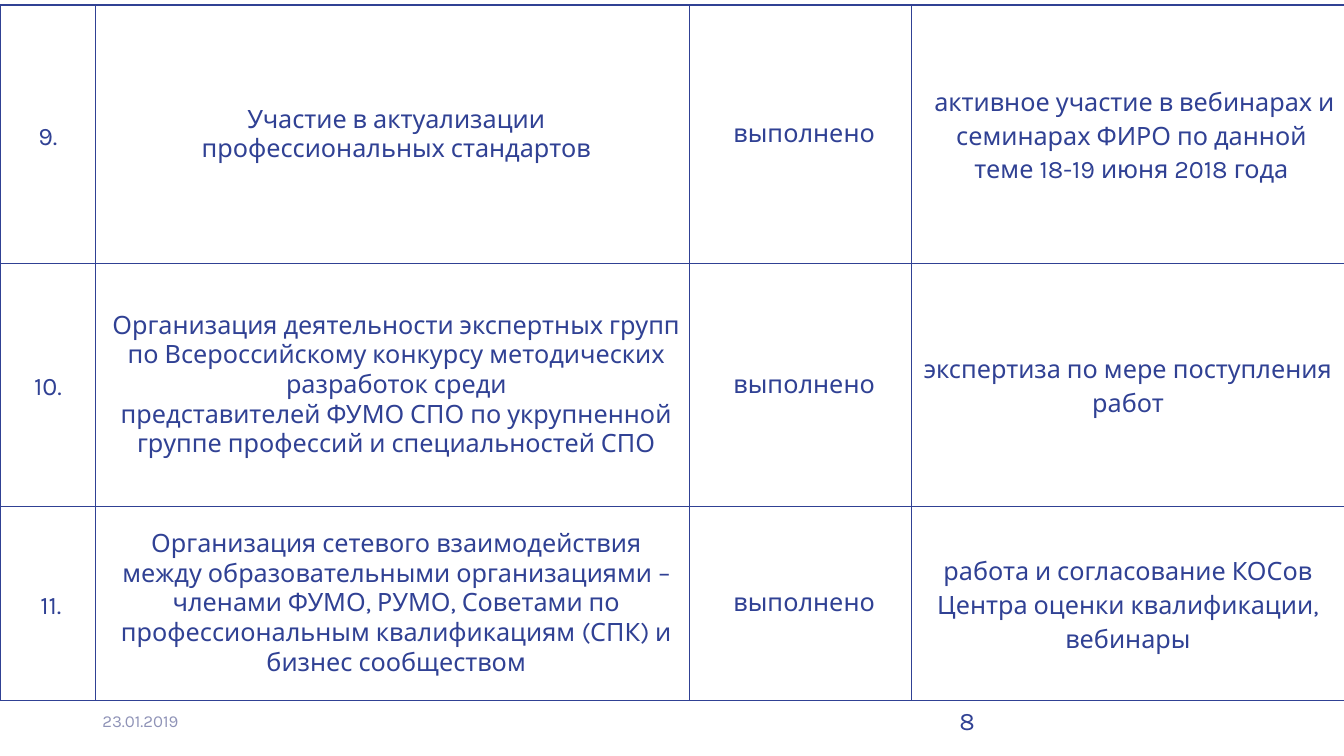
"""Builds a slide with a table of completed activities, a date and a page number."""
from lxml.etree import SubElement
from pptx import Presentation
from pptx.dml.color import RGBColor
from pptx.enum.text import MSO_ANCHOR, PP_ALIGN
from pptx.oxml.ns import qn
from pptx.util import Inches, Pt

COLORS = {"ink": "304194", "muted": "8F93B7"}
DONE = "выполнено"
ACTIVITIES = [
    ("9.",
     "Участие в актуализации\nпрофессиональных стандартов",
     DONE,
     " активное участие в вебинарах и семинарах ФИРО по данной теме 18-19 июня 2018 года"),
    ("10.",
     "Организация деятельности экспертных групп по Всероссийскому конкурсу "
     "методических разработок среди\n"
     "представителей ФУМО СПО по укрупненной группе профессий и специальностей СПО",
     DONE,
     "экспертиза по мере поступления работ"),
    ("\u00a011.".replace("\u00a0", " "),
     "Организация сетевого взаимодействия между образовательными организациями – "
     "членами ФУМО, РУМО, Советами по профессиональным квалификациям (СПК) "
     "и бизнес сообществом",
     DONE,
     "работа и согласование КОСов Центра оценки квалификации, вебинары"),
]
INDENTED = {(0, 1), (0, 2), (0, 3), (1, 1), (1, 2), (2, 1), (2, 2)}
LOOSE_COLUMNS = (0, 3)


class SlideBuilder:
    """Places styled elements on a grid of 160 columns and 90 rows."""

    font = "Karla"
    unit = Inches(1 / 12)
    margin = Inches(0.07)

    def __init__(self, prs):
        self.s = prs.slides.add_slide(prs.slide_layouts[6])

    def grid(self, *cells):
        return [round(c * self.unit) for c in cells]

    def style(self, p, size, color):
        p.font.name = self.font
        p.font.size = Pt(size)
        p.font.color.rgb = RGBColor.from_string(COLORS[color])

    def text(self, box, text, size, color, anchor):
        tf = self.s.shapes.add_textbox(*self.grid(*box)).text_frame
        tf.word_wrap = True
        tf.vertical_anchor = anchor
        tf.text = text
        self.style(tf.paragraphs[0], size, color)

    def borders(self, cell):
        tcPr = cell._tc.get_or_add_tcPr()
        for side in ("lnL", "lnR", "lnT", "lnB"):
            ln = SubElement(tcPr, qn(f"a:{side}"), w=str(Pt(1)))
            fill = SubElement(ln, qn("a:solidFill"))
            SubElement(fill, qn("a:srgbClr"), val=COLORS["ink"])

    def cell(self, cell, text, indented, loose):
        self.borders(cell)
        cell.fill.background()
        cell.vertical_anchor = MSO_ANCHOR.MIDDLE
        cell.margin_left = cell.margin_right = self.margin
        cell.margin_top = cell.margin_bottom = 0
        cell.text = text
        for p in cell.text_frame.paragraphs:
            p.alignment = PP_ALIGN.CENTER
            if loose:
                p.line_spacing = 1.15
            if indented:
                p._p.get_or_add_pPr().set("marL", str(self.margin))
            self.style(p, 18, "ink")

    def table(self, left, top, widths, heights, rows):
        box = self.grid(left, top, sum(widths), sum(heights))
        table = self.s.shapes.add_table(len(rows), len(widths), *box).table
        table.first_row = table.horz_banding = False
        for column, width in zip(table.columns, self.grid(*widths)):
            column.width = width
        for row, height in zip(table.rows, self.grid(*heights)):
            row.height = height
        for i, row in enumerate(rows):
            for j, text in enumerate(row):
                self.cell(table.cell(i, j), text, (i, j) in INDENTED, j in LOOSE_COLUMNS)


def main():
    prs = Presentation()
    prs.slide_width, prs.slide_height = Inches(13.33), Inches(7.5)
    slide = SlideBuilder(prs)
    slide.text((11, 83.4, 36, 4.8), "23.01.2019", 12, "muted", MSO_ANCHOR.MIDDLE)
    slide.text((113, 83.4, 36, 4.8), "8", 18, "ink", MSO_ANCHOR.TOP)
    slide.table(0, 0.6, (11.4, 70.7, 26.4, 51.5), (30.8, 28.9, 23.1), ACTIVITIES)
    prs.save("out.pptx")


if __name__ == "__main__":
    main()
